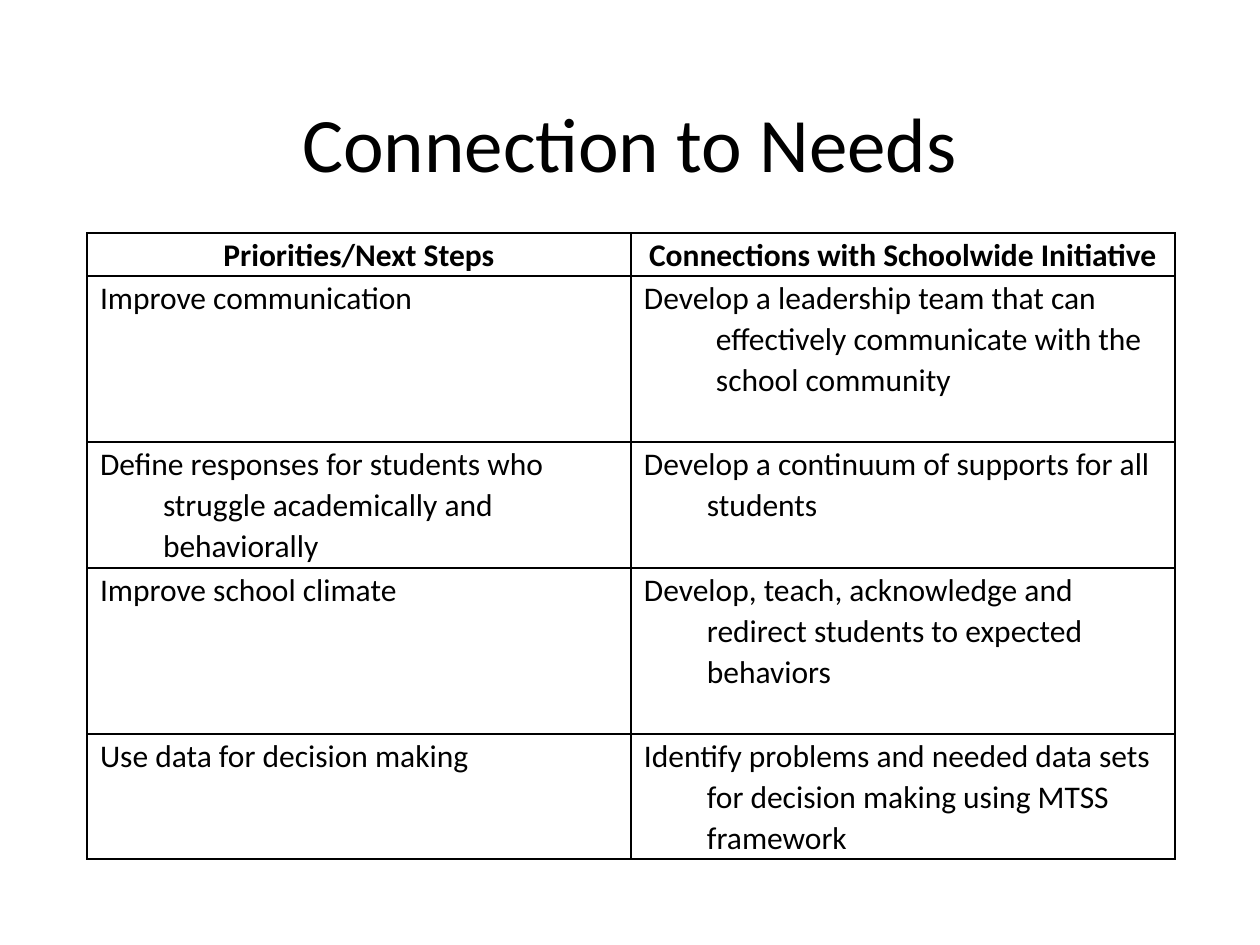
from lxml import etree
from pptx import Presentation
from pptx.dml.color import RGBColor
from pptx.enum.text import MSO_ANCHOR, PP_ALIGN
from pptx.oxml.ns import qn
from pptx.util import Pt

PX = 914400 // 126
BLACK = RGBColor(0, 0, 0)
LEFT, CENTER = PP_ALIGN.LEFT, PP_ALIGN.CENTER
TOP, MIDDLE = MSO_ANCHOR.TOP, MSO_ANCHOR.MIDDLE
TITLE_ONLY = 5

COLUMN_WIDTHS = [544, 544]
ROW_HEIGHTS = [43, 166, 126, 166, 125]
HEADERS = ["Priorities/Next Steps", "Connections with Schoolwide Initiative"]
# Each cell holds its text and its hanging indent in px.
NEEDS = [
    [("Improve communication", 0),
     ("Develop a leadership team that can effectively communicate with the school community", 72)],
    [("Define responses for students who struggle academically and behaviorally", 63),
     ("Develop a continuum of supports for all students", 63)],
    [("Improve school climate", 0),
     ("Develop, teach, acknowledge and redirect students to expected behaviors", 63)],
    [("Use data for decision making", 0),
     ("Identify problems and needed data sets for decision making using MTSS framework", 63)],
]


def set_all(target, values):
    for name, value in values.items():
        setattr(target, name, value)


class SlideBuilder:
    font = "Calibri"
    title_size = Pt(44)
    body_size = Pt(18)
    line_spacing = 1.07
    border = Pt(1)

    def __init__(self, page):
        self.page = page

    def add_text(self, para, text, size, bold=False, align=LEFT):
        para.alignment = align
        span = para.add_run()
        span.text = text
        set_all(span.font, {"name": self.font, "size": size, "bold": bold})
        span.font.color.rgb = BLACK

    def title(self, text, left, top, width, height):
        box = self.page.shapes.title
        set_all(box, {"left": left * PX, "top": top * PX,
                      "width": width * PX, "height": height * PX})
        box.text_frame.vertical_anchor = MIDDLE
        self.add_text(box.text_frame.paragraphs[0], text, self.title_size, align=CENTER)

    def table(self, left, top, widths, heights, headers, rows):
        table = self.page.shapes.add_table(
            len(heights), len(widths), left * PX, top * PX,
            sum(widths) * PX, sum(heights) * PX).table
        set_all(table, {"first_row": False, "horz_banding": False})
        for column, width in zip(table.columns, widths):
            column.width = width * PX
        for row, height in zip(table.rows, heights):
            row.height = height * PX
        for column, text in enumerate(headers):
            self.cell(table.cell(0, column), text, bold=True, align=CENTER)
        for row, entries in enumerate(rows, start=1):
            for column, (text, indent) in enumerate(entries):
                self.cell(table.cell(row, column), text, indent)

    def cell(self, cell, text, indent=0, bold=False, align=LEFT):
        set_all(cell, {"margin_left": 13 * PX, "margin_right": 13 * PX,
                       "margin_top": PX, "margin_bottom": 0, "vertical_anchor": TOP})
        self.borders(cell)
        cell.fill.background()
        para = cell.text_frame.paragraphs[0]
        para.line_spacing = self.line_spacing
        self.add_text(para, text, self.body_size, bold, align)
        if indent:
            properties = para._p.get_or_add_pPr()
            properties.set("marL", str(indent * PX))
            properties.set("indent", str(-indent * PX))

    def borders(self, cell):
        properties = cell._tc.get_or_add_tcPr()
        for side in ("lnL", "lnR", "lnT", "lnB"):
            line = etree.SubElement(properties, qn(f"a:{side}"), w=str(int(self.border)))
            fill = etree.SubElement(line, qn("a:solidFill"))
            etree.SubElement(fill, qn("a:srgbClr"), val=str(BLACK))


def main():
    deck = Presentation()
    set_all(deck, {"slide_width": 1260 * PX, "slide_height": 945 * PX})
    builder = SlideBuilder(deck.slides.add_slide(deck.slide_layouts[TITLE_ONLY]))
    builder.title("Connection to Needs", 87, 50, 1086, 183)
    builder.table(87, 233, COLUMN_WIDTHS, ROW_HEIGHTS, HEADERS, NEEDS)
    deck.save("out.pptx")


if __name__ == "__main__":
    main()
